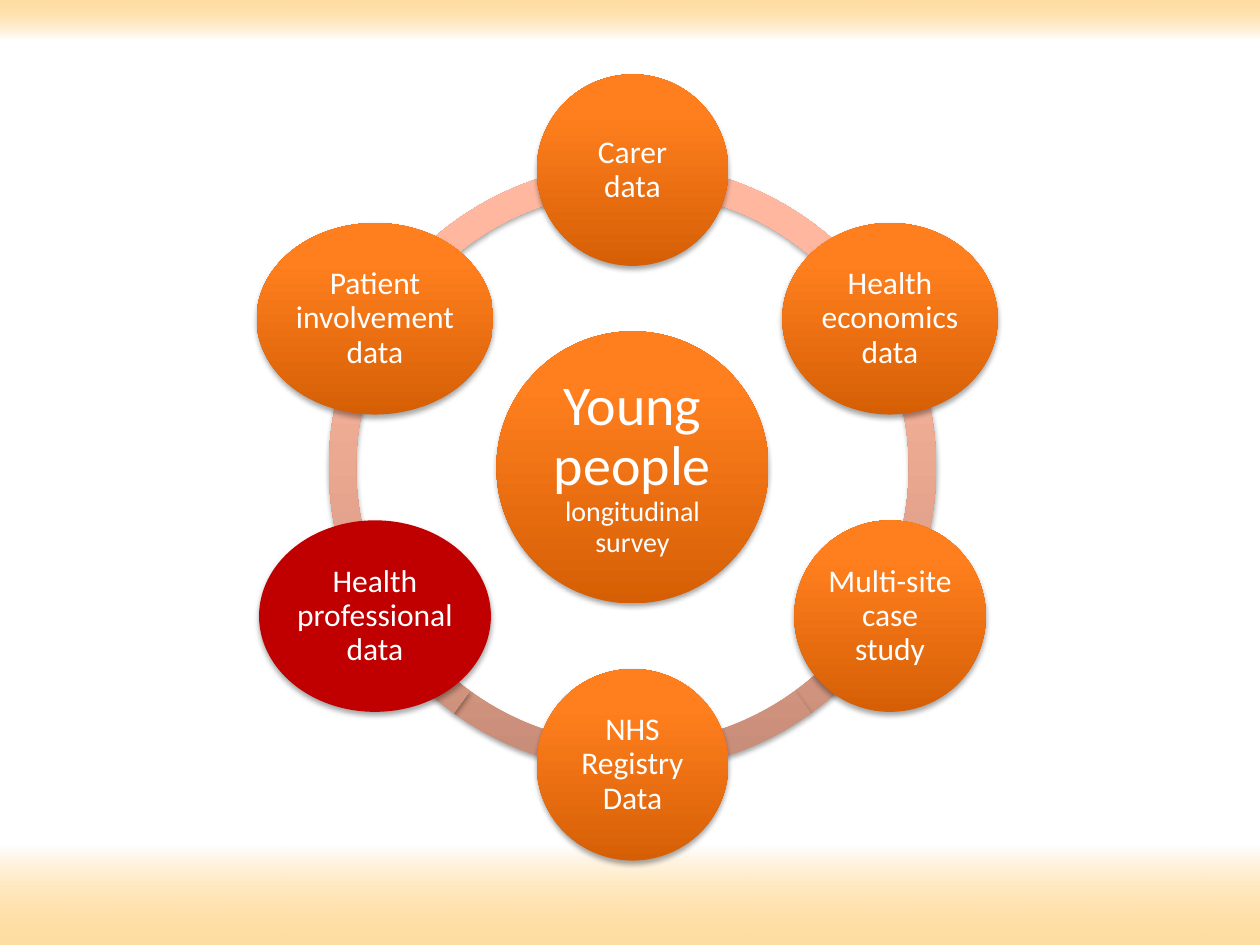
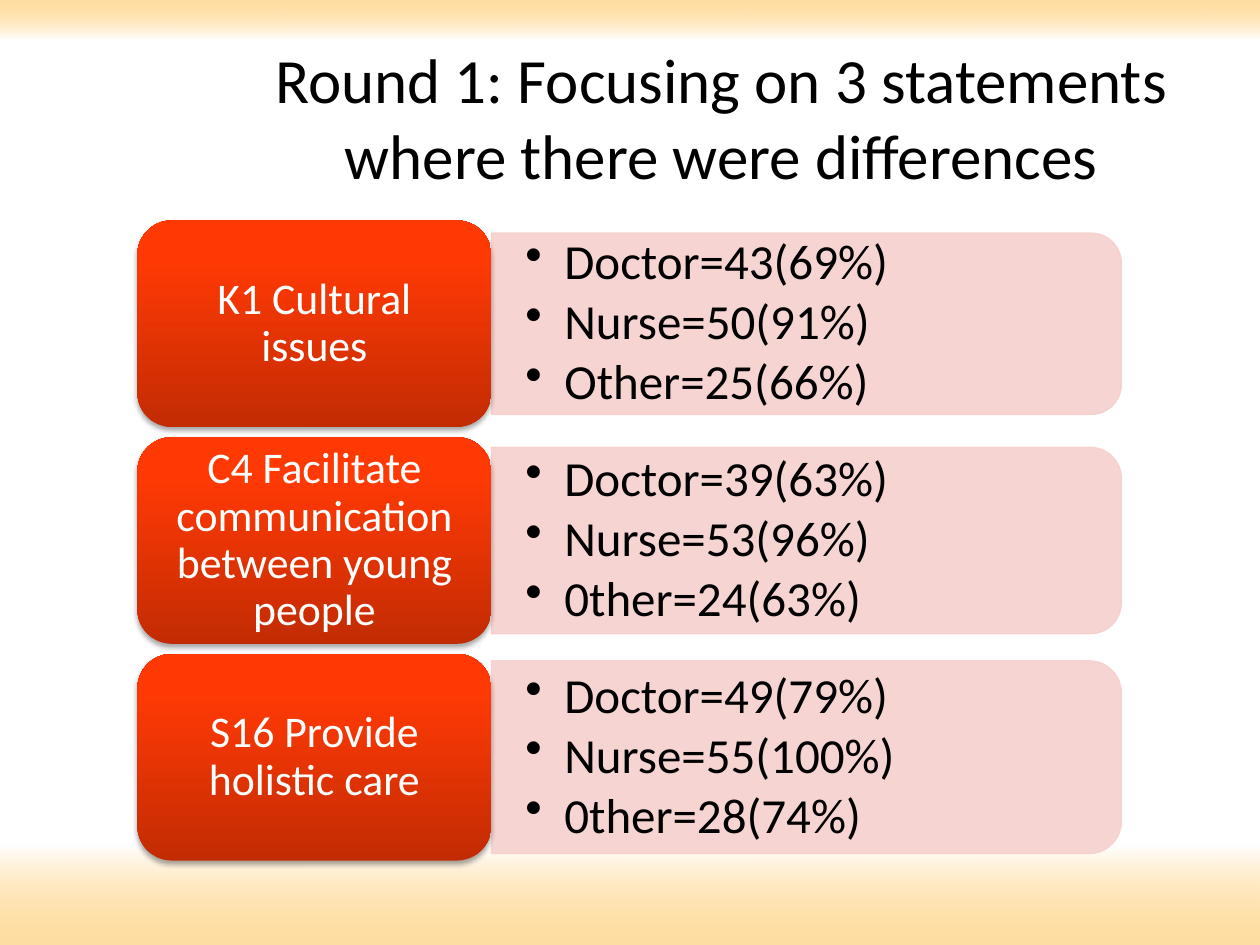
from dataclasses import dataclass
from itertools import pairwise
from math import cos, radians, sin

from lxml import etree
from pptx import Presentation
from pptx.dml.color import RGBColor
from pptx.enum.shapes import MSO_SHAPE
from pptx.enum.text import MSO_ANCHOR, PP_ALIGN
from pptx.oxml.ns import qn
from pptx.util import Inches, Pt

CENTER, LEFT, MIDDLE = PP_ALIGN.CENTER, PP_ALIGN.LEFT, MSO_ANCHOR.MIDDLE
OVAL, ARC, BAND = MSO_SHAPE.OVAL, MSO_SHAPE.BLOCK_ARC, MSO_SHAPE.FLOWCHART_PROCESS
LABEL, PANEL = MSO_SHAPE.ROUNDED_RECTANGLE, MSO_SHAPE.ROUND_2_SAME_RECTANGLE
TITLE_ONLY, BLANK = 5, 6
UP, DOWN = 90, 270


@dataclass(frozen=True)
class Theme:
    font: str = "Calibri"
    black: str = "000000"
    white: str = "FFFFFF"
    red: str = "C00000"
    panel: str = "F6D0CD"
    orange: tuple = ((0, "D65F05", 100), (80, "FF7F1E", 100), (100, "FF801F", 100))
    salmon: tuple = ((0, "C78C78", 100), (80, "FFB89F", 100), (100, "FFB9A1", 100))
    scarlet: tuple = ((0, "C32C03", 100), (80, "FE3904", 100), (100, "FF3904", 100))
    top_band: tuple = ((0, "FFBD47", 50), (100, "FFFFFF", 100))
    bottom_band: tuple = ((0, "FFFFFF", 100), (100, "FFBD47", 50))
    title: int = 36
    hub: int = 32
    list: int = 28
    label: int = 25
    node: int = 18
    hub_note: int = 16


THEME = Theme()

BANDS = [(0, 0.31, THEME.top_band), (6.7, 0.8, THEME.bottom_band)]

HUB = [("Young people ", THEME.hub), ("longitudinal survey", THEME.hub_note)]
NODES = [
    ("Carer data", 1.52, THEME.orange),
    ("Health economics data", 1.71, THEME.orange),
    ("Multi-site case study", 1.52, THEME.orange),
    ("NHS Registry Data", 1.52, THEME.orange),
    ("Health professional data", 1.84, THEME.red),
    ("Patient involvement data", 1.88, THEME.orange),
]
ARC_ENDS = [18, 54, 90, 126, 162, 198, 18]
CENTRE_X, CENTRE_Y, RADIUS = 5.02, 3.71, 2.36
RING, HUB_SIZE, NODE_HEIGHT = 4.82, 2.16, 1.52

TITLE = "Round 1: Focusing on 3 statements where there were differences"
STATEMENTS = [
    ("K1 Cultural issues", 1.44,
     ["Doctor=43(69%)", "Nurse=50(91%)", "Other=25(66%)"]),
    ("C4 Facilitate communication between young people", 1.48,
     ["Doctor=39(63%)", "Nurse=53(96%)", "0ther=24(63%)"]),
    ("S16 Provide holistic care", 1.53,
     ["Doctor=49(79%)", "Nurse=55(100%)", "0ther=28(74%)"]),
]
FIRST_CENTRE, ROW_PITCH = 2.57, 1.72
LABEL_LEFT, LABEL_WIDTH, LABEL_HEIGHT = 1.09, 2.81, 1.64
PANEL_LEFT, PANEL_LENGTH = 3.9, 5


def write(shape, paragraphs, colour=THEME.white, align=CENTER, insets=(0.1, 0.05),
          spacing=0.9, after=0, bullet=None):
    frame = shape.text_frame
    frame.word_wrap = True
    frame.vertical_anchor = MIDDLE
    frame.margin_left = frame.margin_right = Inches(insets[0])
    frame.margin_top = frame.margin_bottom = Inches(insets[1])
    for index, spans in enumerate(paragraphs):
        para = frame.add_paragraph() if index else frame.paragraphs[0]
        para.alignment = align
        para.line_spacing = spacing
        para.space_after = Pt(after)
        if bullet:
            properties = para._p.get_or_add_pPr()
            properties.set("marL", str(Inches(0.31)))
            properties.set("indent", str(-Inches(0.31)))
            etree.SubElement(properties, qn("a:buChar"), char=bullet)
        for text, size in spans:
            span = para.add_run()
            span.text = text
            span.font.name = THEME.font
            span.font.size = Pt(size)
            span.font.color.rgb = RGBColor.from_string(colour)


def add_gradient(shape, stops, angle):
    shape.fill.gradient()
    shape.fill.gradient_angle = angle
    stop_list = shape.element.spPr.find(".//" + qn("a:gsLst"))
    stop_list.clear()
    for position, colour, opacity in stops:
        stop = etree.SubElement(stop_list, qn("a:gs"), pos=str(position * 1000))
        tint = etree.SubElement(stop, qn("a:srgbClr"), val=colour)
        etree.SubElement(tint, qn("a:alpha"), val=str(opacity * 1000))


def add_shadow(shape):
    effects = shape.element.spPr.find(qn("a:effectLst"))
    shadow = etree.SubElement(effects, qn("a:outerShdw"), blurRad=str(Pt(3.1)),
                              dist=str(Pt(1.8)), dir="5400000", rotWithShape="0")
    tint = etree.SubElement(shadow, qn("a:srgbClr"), val=THEME.black)
    etree.SubElement(tint, qn("a:alpha"), val="35000")


def add_form(slide, kind, left, top, width, height, fill, angle=UP, shadow=True):
    shape = slide.shapes.add_shape(kind, Inches(left), Inches(top),
                                   Inches(width), Inches(height))
    shape.shadow.inherit = False
    shape.line.fill.background()
    if isinstance(fill, str):
        shape.fill.solid()
        shape.fill.fore_color.rgb = RGBColor.from_string(fill)
    else:
        add_gradient(shape, fill, angle)
    if shadow:
        add_shadow(shape)
    return shape


def add_centred(slide, kind, x, y, width, height, fill, **options):
    return add_form(slide, kind, x - width / 2, y - height / 2, width, height,
                    fill, **options)


def add_master_bands(deck, slide):
    for number, (top, height, stops) in enumerate(BANDS):
        band = add_form(slide, BAND, 0, top, 10, height, stops, angle=DOWN, shadow=False)
        band.element.nvSpPr.cNvPr.set("id", str(20 + number))
        deck.slide_master.shapes.element.insert(2 + number, band.element)


def build_data_ring(slide):
    for start, end in pairwise(ARC_ENDS):
        arc = add_centred(slide, ARC, CENTRE_X, CENTRE_Y, RING, RING, THEME.salmon)
        arc.adjustments[0] = start * 0.6
        arc.adjustments[1] = end * 0.6
        arc.adjustments[2] = 0.045
    hub = add_centred(slide, OVAL, CENTRE_X, CENTRE_Y, HUB_SIZE, HUB_SIZE, THEME.orange)
    write(hub, [HUB], insets=(0.04, 0.04))
    for index, (text, width, fill) in enumerate(NODES):
        angle = radians(index * 360 / len(NODES) - 90)
        node = add_centred(slide, OVAL, CENTRE_X + RADIUS * cos(angle),
                           CENTRE_Y + RADIUS * sin(angle), width, NODE_HEIGHT, fill)
        write(node, [[(text, THEME.node)]], insets=(0.03, 0.03))


def add_panel(slide, centre, height):
    panel = add_centred(slide, PANEL, PANEL_LEFT + PANEL_LENGTH / 2, centre,
                        height, PANEL_LENGTH, THEME.panel, shadow=False)
    panel.rotation = 90
    panel.line.color.rgb = RGBColor.from_string(THEME.panel)
    panel.line.width = Pt(0.75)
    for tint in panel.element.spPr.iter(qn("a:srgbClr")):
        etree.SubElement(tint, qn("a:alpha"), val="90000")


def build_statements(slide):
    title = slide.shapes.title
    title.left, title.top = Inches(1.95), Inches(0.3)
    title.width, title.height = Inches(7.55), Inches(1.25)
    write(title, [[(TITLE, THEME.title)]], colour=THEME.black, spacing=1.0)
    for row, (statement, height, answers) in enumerate(STATEMENTS):
        centre = FIRST_CENTRE + row * ROW_PITCH
        add_panel(slide, centre, height)
        box = slide.shapes.add_textbox(Inches(PANEL_LEFT), Inches(centre - height / 2 + 0.07),
                                       Inches(4.93), Inches(height - 0.14))
        write(box, [[(answer, THEME.list)] for answer in answers], colour=THEME.black,
              align=LEFT, insets=(0.27, 0.14), after=4, bullet="•")
        label = add_form(slide, LABEL, LABEL_LEFT, centre - LABEL_HEIGHT / 2,
                         LABEL_WIDTH, LABEL_HEIGHT, THEME.scarlet)
        write(label, [[(statement, THEME.label)]])


def main():
    deck = Presentation()
    deck.slide_width, deck.slide_height = Inches(10), Inches(7.5)
    ring_slide = deck.slides.add_slide(deck.slide_layouts[BLANK])
    add_master_bands(deck, ring_slide)
    build_data_ring(ring_slide)
    build_statements(deck.slides.add_slide(deck.slide_layouts[TITLE_ONLY]))
    deck.save("out.pptx")


if __name__ == "__main__":
    main()
